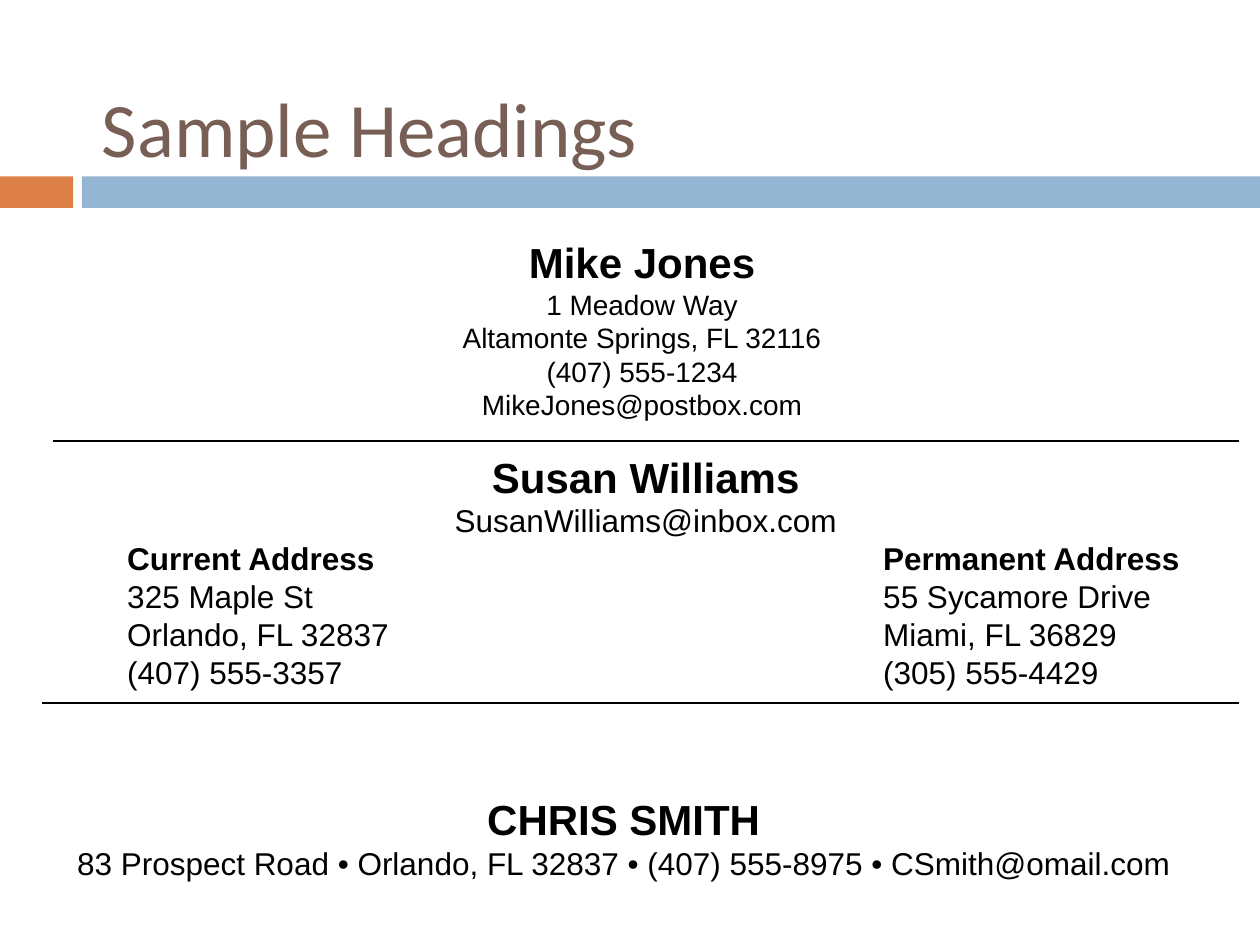
from lxml.etree import SubElement
from pptx import Presentation
from pptx.dml.color import RGBColor
from pptx.enum.shapes import MSO_CONNECTOR as Connector, MSO_SHAPE as Shape
from pptx.enum.text import MSO_ANCHOR as Anchor, MSO_AUTO_SIZE as AutoSize, PP_ALIGN as Align
from pptx.oxml.ns import qn
from pptx.util import Inches, Pt

ORANGE = RGBColor(0xDD, 0x80, 0x47)
BLUE = RGBColor(0x94, 0xB6, 0xD2)
BROWN = RGBColor(0x77, 0x5F, 0x55)
BLACK = RGBColor(0, 0, 0)

NAME = {"size": Pt(24), "bold": True}
SMALL = {"size": Pt(16), "bold": False}
BODY = {"size": Pt(18), "bold": False}
LABEL = {"size": Pt(18), "bold": True}
TITLE = {"size": Pt(44), "name": "Calibri"}
COLUMN_STOPS = (0.76, 6.76)


def add_bar(page, left, width, color):
    bar = page.shapes.add_shape(Shape.RECTANGLE, Inches(left), Inches(1.4), Inches(width), Inches(0.25))
    bar.shadow.inherit = False
    bar.fill.solid()
    bar.fill.fore_color.rgb = color
    bar.line.fill.background()


def add_rule(page, left, top):
    rule = page.shapes.add_connector(
        Connector.STRAIGHT, Inches(left), Inches(top), Inches(9.83), Inches(top))
    rule.line.color.rgb = BLACK
    rule.line.width = Pt(0.75)
    SubElement(rule._element.spPr, qn("a:effectLst"))


def add_box(page, left, top, width, height, **frame_format):
    box = page.shapes.add_textbox(Inches(left), Inches(top), Inches(width), Inches(height))
    frame_format = {"word_wrap": True, "auto_size": AutoSize.NONE, **frame_format}
    for key, value in frame_format.items():
        setattr(box.text_frame, key, value)
    return box.text_frame


def add_line(frame, text, font_format, align=Align.CENTER, color=BLACK):
    para = frame.paragraphs[0] if not frame.paragraphs[0].runs else frame.add_paragraph()
    para.alignment = align
    span = para.add_run()
    span.text = text
    for key, value in {"name": "Arial", **font_format}.items():
        setattr(span.font, key, value)
    span.font.color.rgb = color
    return para


def add_columns(frame, left_text, right_text, font_format):
    para = add_line(frame, f"\t{left_text}\t{right_text}", font_format, Align.LEFT)
    stops = SubElement(para._p.get_or_add_pPr(), qn("a:tabLst"))
    for stop in COLUMN_STOPS:
        SubElement(stops, qn("a:tab"), pos=str(Inches(stop)), algn="l")


def add_title(page):
    frame = add_box(page, 0.71, 0.42, 9, 1.17, vertical_anchor=Anchor.MIDDLE)
    add_line(frame, "Sample Headings", TITLE, Align.LEFT, BROWN)


def add_stacked_heading(page):
    frame = add_box(page, 2, 1.83, 6.19, 1.57)
    add_line(frame, "Mike Jones", NAME)
    for text in ("1 Meadow Way", "Altamonte Springs, FL 32116",
                 "(407) 555-1234", "MikeJones@postbox.com"):
        add_line(frame, text, SMALL)


def add_two_address_heading(page):
    frame = add_box(page, 0.25, 3.58, 9.75, 2.12,
                    margin_left=0, margin_top=0, margin_right=0, margin_bottom=0)
    add_line(frame, "Susan Williams", NAME)
    add_line(frame, "SusanWilliams@inbox.com", BODY)
    add_columns(frame, "Current Address", "Permanent Address", LABEL)
    for current, permanent in (
            ("325 Maple St", "55 Sycamore Drive"),
            ("Orlando, FL 32837", "Miami, FL 36829"),
            ("(407) 555-3357", "(305) 555-4429")):
        add_columns(frame, current, permanent, BODY)


def add_one_line_heading(page):
    frame = add_box(page, -0.11, 6.25, 9.75, 1.11)
    contact = "83 Prospect Road • Orlando, FL 32837 • (407) 555-8975 • CSmith@omail.com"
    for text, font_format in (("CHRIS SMITH", NAME), (contact, BODY)):
        para = add_line(frame, text, font_format)
        para._p.get_or_add_pPr().set("indent", str(Inches(0.37)))


def main():
    deck = Presentation()
    deck.slide_width, deck.slide_height = Inches(10), Inches(7.5)
    page = deck.slides.add_slide(deck.slide_layouts[6])
    add_bar(page, 0, 0.58, ORANGE)
    add_bar(page, 0.65, 9.35, BLUE)
    add_title(page)
    add_stacked_heading(page)
    add_rule(page, 0.42, 3.5)
    add_two_address_heading(page)
    add_rule(page, 0.33, 5.58)
    add_one_line_heading(page)
    deck.save("out.pptx")


if __name__ == "__main__":
    main()
